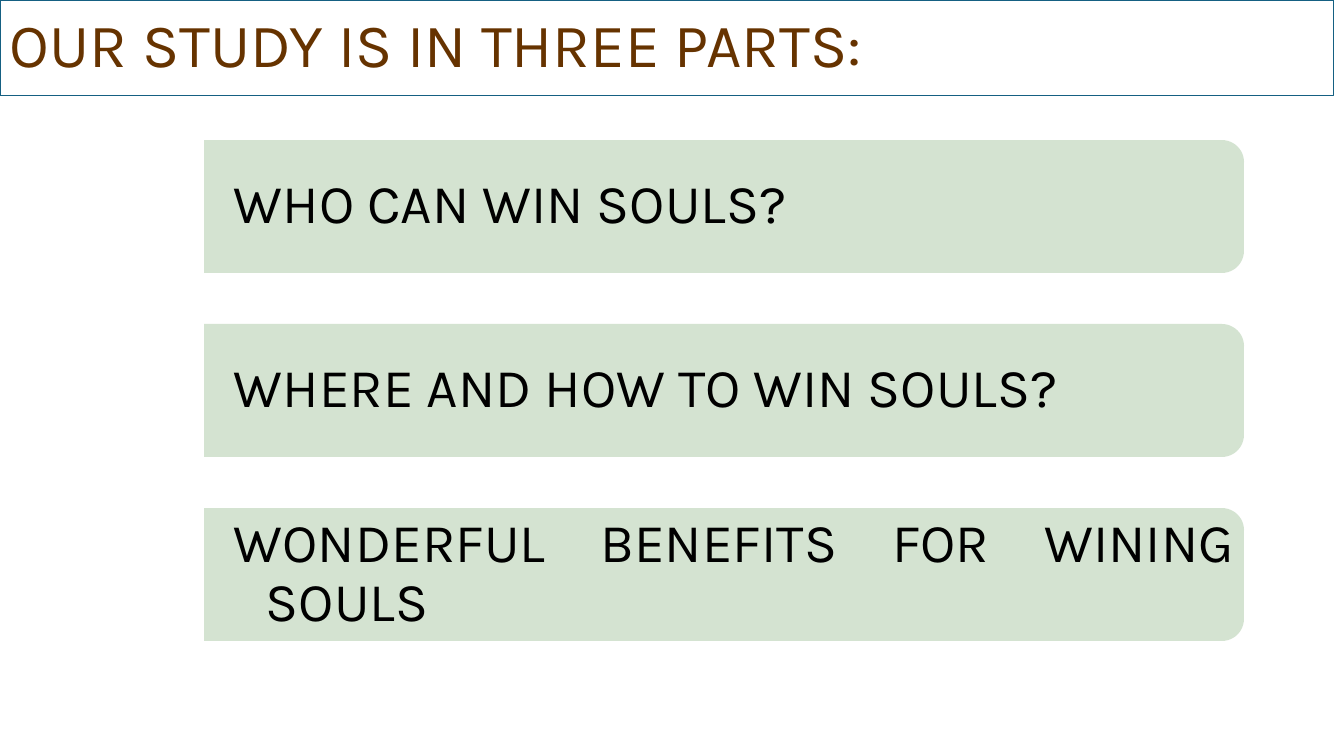
from pptx import Presentation
from pptx.dml.color import RGBColor
from pptx.enum.shapes import MSO_SHAPE
from pptx.enum.text import MSO_ANCHOR, PP_ALIGN
from pptx.oxml.ns import qn
from pptx.util import Emu, Pt
from lxml.etree import SubElement


def px(n):
    return Emu(round(n * 914400 / 100.8))


def color(code):
    return RGBColor.from_string(code)


class Deck:
    font = "Karla"
    brown, black = "663300", "000000"
    green, blue = "D0E1CD", "156082"

    def __init__(self, wide, high):
        self.prs = Presentation()
        self.prs.slide_width, self.prs.slide_height = px(wide), px(high)
        self.slide = self.prs.slides.add_slide(self.prs.slide_layouts[6])

    def letter(self, shape, text, size, ink, align):
        frame = shape.text_frame
        frame.word_wrap = True
        frame.vertical_anchor = MSO_ANCHOR.MIDDLE
        frame.text = text
        para = frame.paragraphs[0]
        para.alignment, para.line_spacing = align, 0.9
        font = para.runs[0].font
        font.name, font.size = self.font, Pt(size)
        font.color.rgb = color(ink)
        return frame

    def title(self, text, x, y, w, h):
        box = self.slide.shapes.add_shape(
            MSO_SHAPE.RECTANGLE, px(x), px(y), px(w), px(h))
        box.shadow.inherit = False
        box.fill.background()
        box.line.color.rgb = color(self.blue)
        box.line.width = Pt(0.75)
        self.letter(box, text, 44, self.brown, PP_ALIGN.LEFT)

    def bar(self, x, y, w, h):
        # Upright shape turned a quarter about its centre
        bar = self.slide.shapes.add_shape(
            MSO_SHAPE.ROUND_2_SAME_RECTANGLE,
            px(x + (w - h) / 2), px(y + (h - w) / 2), px(h), px(w))
        bar.rotation = 90
        bar.shadow.inherit = False
        bar.line.fill.background()
        bar.fill.solid()
        bar.fill.fore_color.rgb = color(self.green)
        tint = bar._element.spPr.find(qn("a:solidFill")).find(qn("a:srgbClr"))
        SubElement(tint, qn("a:alpha"), val="90000")

    def label(self, text, x, y, w, h):
        box = self.slide.shapes.add_textbox(px(x), px(y), px(w), px(h))
        frame = self.letter(box, text, 39, self.black, PP_ALIGN.JUSTIFY)
        frame.margin_left = px(30)
        frame.margin_top = frame.margin_right = frame.margin_bottom = px(3)
        # Hanging indent
        props = frame.paragraphs[0]._p.get_or_add_pPr()
        props.set("marL", str(px(32)))
        props.set("indent", str(-px(32)))


def main():
    deck = Deck(1344, 756)

    # Heading
    deck.title("OUR STUDY IS IN THREE PARTS:", 0, 0, 1334, 96)

    # Three parts at an equal pitch
    parts = ["WHO CAN WIN SOULS?", "WHERE AND HOW TO WIN SOULS?",
             "WONDERFUL BENEFITS FOR WINING SOULS"]
    left, top, pitch = 204, 140, 184
    for i, part in enumerate(parts):
        y = top + i * pitch
        deck.bar(left, y, 1040, 133)
        deck.label(part, left, y + 6, 1033, 120)

    deck.prs.save("out.pptx")


if __name__ == "__main__":
    main()
